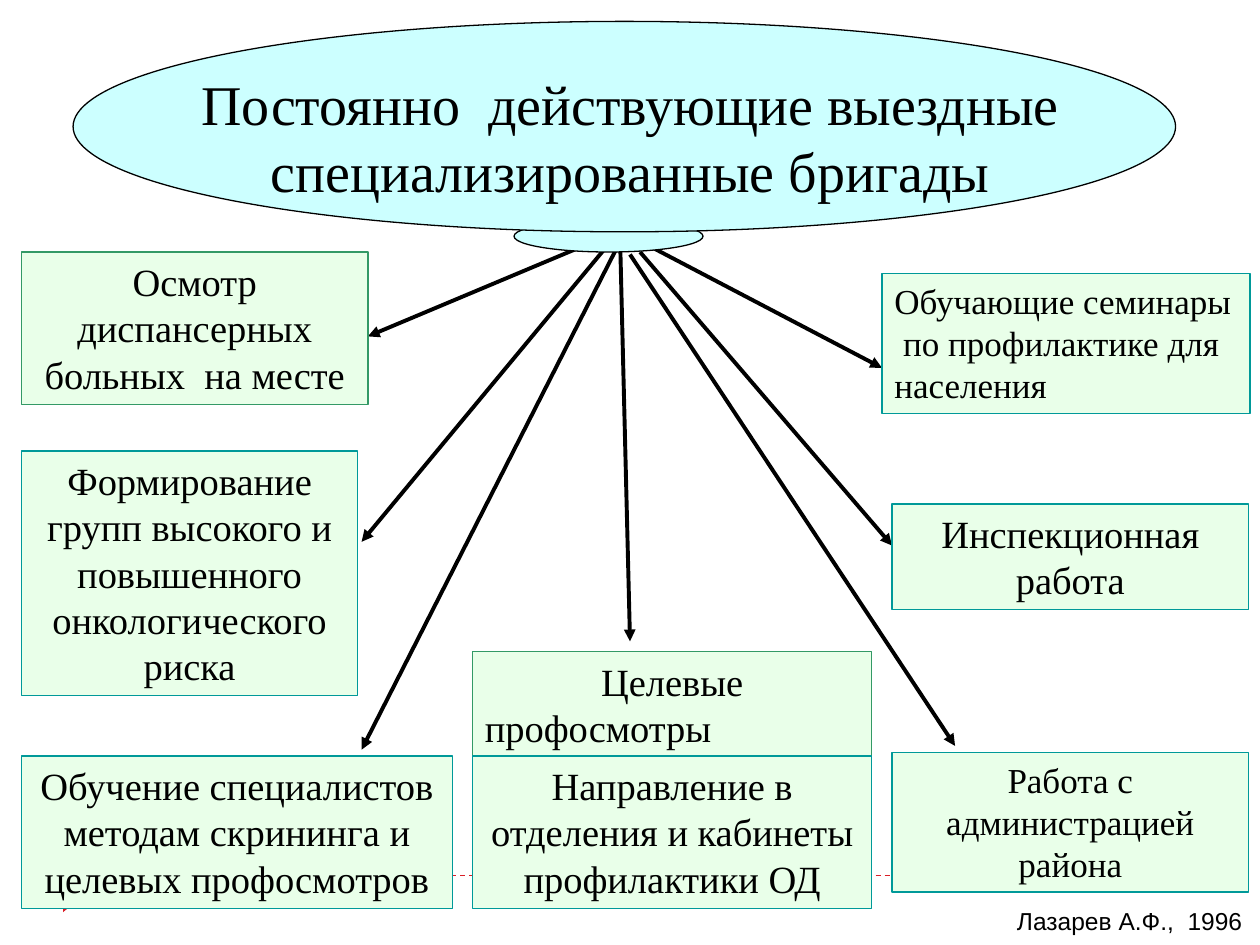
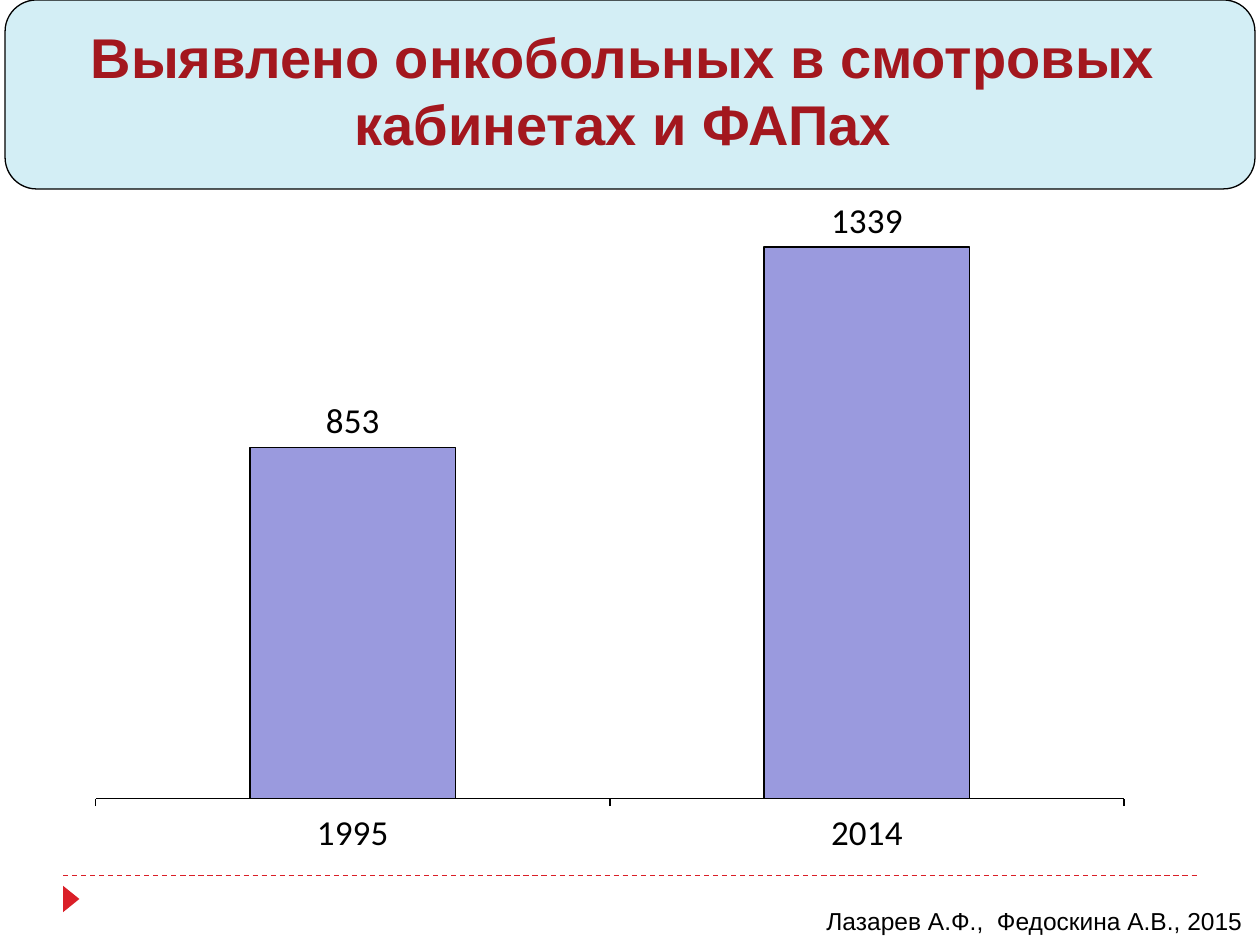
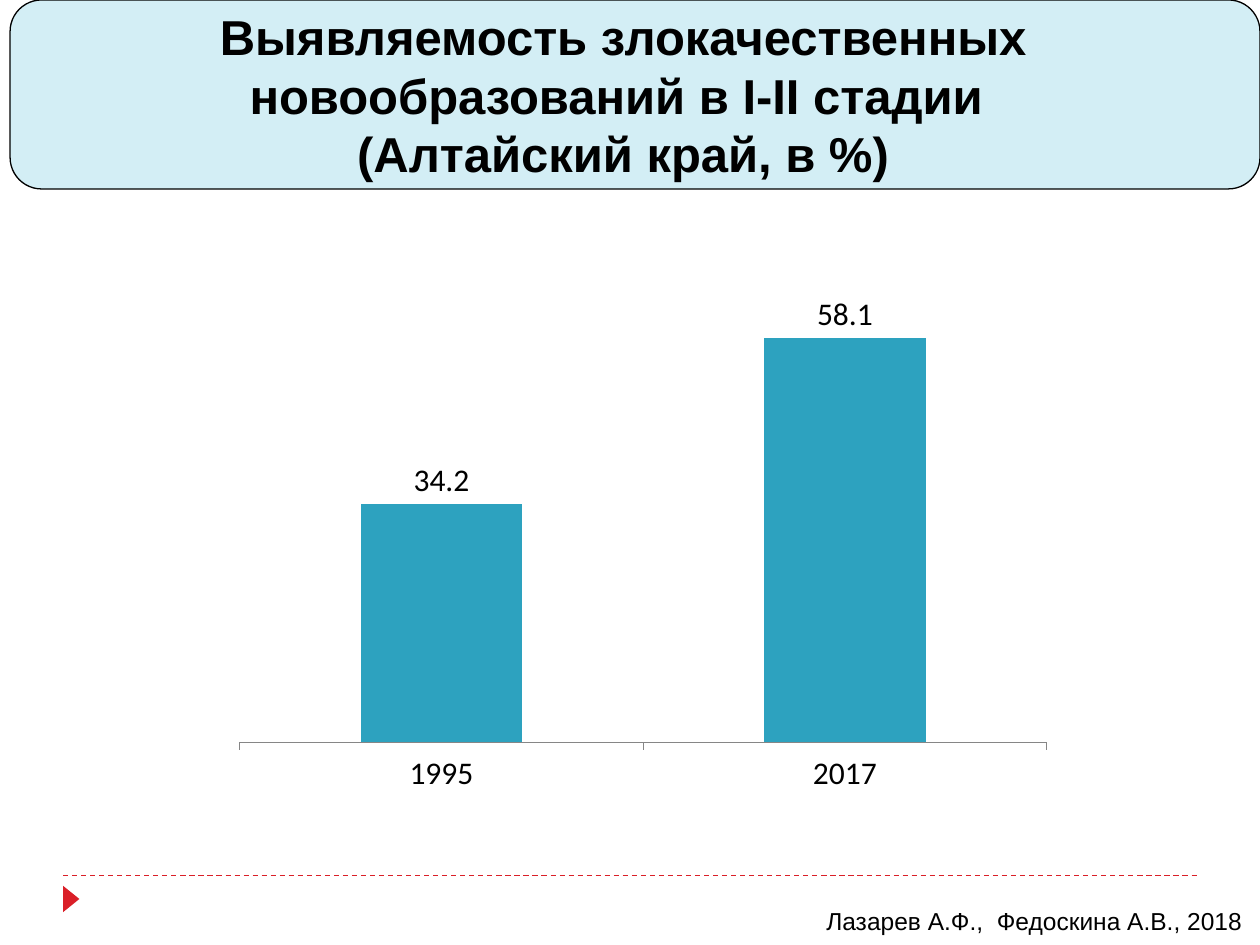
from typing import NamedTuple, Optional

from lxml import etree
from pptx import Presentation
from pptx.chart.data import CategoryChartData as ChartData
from pptx.dml.color import RGBColor
from pptx.enum.chart import XL_CHART_TYPE as Kind
from pptx.enum.chart import XL_LABEL_POSITION as Spot
from pptx.enum.chart import XL_TICK_MARK as Tick
from pptx.enum.dml import MSO_LINE as Dash
from pptx.enum.shapes import MSO_CONNECTOR as Link
from pptx.enum.shapes import MSO_SHAPE as Form
from pptx.enum.text import MSO_ANCHOR as Anchor
from pptx.enum.text import MSO_AUTO_SIZE as Fit
from pptx.enum.text import PP_ALIGN as Align
from pptx.oxml.ns import qn
from pptx.util import Inches, Pt

# Shared colours and fonts
BLACK = RGBColor(0, 0, 0)
RED = RGBColor(0xDA, 0x1F, 0x28)
WINE = RGBColor(0xA3, 0x17, 0x1E)
CYAN = RGBColor(0xCC, 0xFF, 0xFF)
MINT = RGBColor(0xE9, 0xFF, 0xE9)
GREEN = RGBColor(0x33, 0x99, 0x66)
TEAL = RGBColor(0x00, 0x99, 0x99)
PALE = RGBColor(0xD3, 0xEE, 0xF5)
LILAC = RGBColor(0x6B, 0x6B, 0xCF)
BLUE = RGBColor(0x2D, 0xA2, 0xBF)
GREY = RGBColor(0x86, 0x86, 0x86)
SANS, SERIF, CHART = "Arial", "Times New Roman", "Calibri"


class Area(NamedTuple):
    left: float
    top: float
    width: float
    height: float

    def lengths(self) -> list:
        return [Inches(side) for side in self]


class Style(NamedTuple):
    size: int
    font: str = SANS
    color: RGBColor = BLACK
    bold: bool = False


class Task(NamedTuple):
    area: Area
    text: str
    size: int = 22
    edge: RGBColor = TEAL
    aligns: tuple = (Align.CENTER,)


class Arrow(NamedTuple):
    start: tuple
    end: tuple


class Bars(NamedTuple):
    area: Area
    years: tuple
    values: tuple
    top: int
    size: int
    fill: RGBColor
    axis: RGBColor
    edge: Optional[RGBColor] = None
    alpha: int = 100


class Panel(NamedTuple):
    left: float
    area: Area
    title: str
    style: Style
    credit: str
    width: float
    bars: Bars


def write(frame, text: str, style: Style, aligns=(Align.CENTER,), wrap=True):
    frame.text = text
    frame.auto_size = Fit.NONE
    frame.word_wrap = wrap
    frame.vertical_anchor = Anchor.TOP
    frame.margin_left = frame.margin_right = Inches(0.1)
    frame.margin_top = frame.margin_bottom = Inches(0.05)
    for par, align in zip(frame.paragraphs, aligns):
        par.alignment = align
        par.space_before = Pt(0)
        for run in par.runs:
            font = run.font
            font.size, font.name, font.bold = Pt(style.size), style.font, style.bold
            font.color.rgb = style.color


def draw(slide, form, area: Area, fill: RGBColor, edge: Optional[RGBColor] = BLACK):
    shape = slide.shapes.add_shape(form, *area.lengths())
    shape.shadow.inherit = False
    shape.fill.solid()
    shape.fill.fore_color.rgb = fill
    if edge is None:
        shape.line.fill.background()
    else:
        shape.line.color.rgb = edge
        shape.line.width = Pt(0.75)
    return shape


def join(slide, start: tuple, end: tuple, color: RGBColor, width: float):
    ends = [Inches(value) for value in (*start, *end)]
    line = slide.shapes.add_connector(Link.STRAIGHT, *ends)
    line.line.color.rgb = color
    line.line.width = Pt(width)
    etree.SubElement(line.element.spPr, qn("a:effectLst"))
    return line


def point(slide, arrow: Arrow):
    line = join(slide, arrow.start, arrow.end, BLACK, 2.25)
    stroke = line.element.spPr.find(qn("a:ln"))
    etree.SubElement(stroke, qn("a:tailEnd"), type="triangle")


def start(deck):
    """Add a title-only slide with the dashed rule and red marker."""
    slide = deck.slides.add_slide(deck.slide_layouts[5])
    rule = join(slide, (0.5, 6.95), (9.5, 6.95), RED, 0.75)
    rule.line.dash_style = Dash.DASH
    mark = draw(slide, Form.ISOSCELES_TRIANGLE, Area(0.46, 7.07, 0.21, 0.13), RED, None)
    mark.rotation = 90
    return slide


def head(slide, area: Area, text: str, style: Style):
    """Place the title in front of what is drawn so far."""
    title = slide.shapes.title
    title.left, title.top, title.width, title.height = area.lengths()
    write(title.text_frame, text, style)
    slide.shapes.element.append(title.element)


def sign(slide, text: str, width: float):
    area = Area(9.96 - width, 7.14, width, 0.34)
    box = slide.shapes.add_textbox(*area.lengths())
    write(box.text_frame, text, Style(14), (Align.RIGHT,), wrap=False)


def plot(slide, bars: Bars):
    data = ChartData()
    data.categories = bars.years
    data.add_series("Series 1", bars.values)
    frame = slide.shapes.add_chart(Kind.COLUMN_CLUSTERED, *bars.area.lengths(), data)
    chart = frame.chart
    chart.has_legend = chart.has_title = False
    chart.font.name, chart.font.size = CHART, Pt(bars.size)
    chart.font.color.rgb = BLACK

    # Axes
    scale = chart.value_axis
    scale.visible = scale.has_major_gridlines = False
    scale.minimum_scale, scale.maximum_scale = 0, bars.top
    axis = chart.category_axis
    axis.major_tick_mark = Tick.OUTSIDE
    axis.format.line.color.rgb = bars.axis
    axis.format.line.width = Pt(0.75)

    # Columns and their labels
    group = chart.plots[0]
    group.gap_width, group.vary_by_categories = 150, False
    group.has_data_labels = True
    group.data_labels.show_value = True
    group.data_labels.position = Spot.OUTSIDE_END
    look = group.series[0].format
    look.fill.solid()
    look.fill.fore_color.rgb = bars.fill
    if bars.alpha < 100:
        color = next(group.series[0]._element.iter(qn("a:srgbClr")))
        etree.SubElement(color, qn("a:alpha"), val=str(bars.alpha * 1000))
    if bars.edge is not None:
        look.line.color.rgb = bars.edge
        look.line.width = Pt(0.75)


# Content of the scheme of mobile teams
ARROWS = [
    Arrow((5, 2.02), (7.58, 5.92)),
    Arrow((4.92, 1.83), (7, 2.92)),
    Arrow((4.92, 1.83), (2.92, 2.67)),
    Arrow((4.92, 1.83), (2.87, 4.3)),
    Arrow((4.92, 1.92), (2.87, 5.95)),
    Arrow((4.92, 1.83), (5, 5.09)),
    Arrow((5.08, 2), (7.08, 4.33)),
]
TASKS = [
    Task(Area(0.17, 2, 2.75, 1.21), "Осмотр диспансерных больных  на месте", edge=GREEN),
    Task(Area(3.75, 5.17, 3.17, 0.84), "Целевые\nпрофосмотры", edge=GREEN,
         aligns=(Align.CENTER, Align.LEFT)),
    Task(Area(3.75, 6, 3.17, 1.21), "Направление в отделения и кабинеты профилактики ОД"),
    Task(Area(7.08, 4, 2.83, 0.84), "Инспекционная работа"),
    Task(Area(7.08, 5.97, 2.83, 1.11), "Работа с администрацией района", 20),
    Task(Area(0.17, 3.58, 2.67, 1.94),
         "Формирование групп высокого и повышенного онкологического риска"),
    Task(Area(7, 2.17, 2.92, 1.11), "Обучающие семинары  по профилактике для населения",
         20, aligns=(Align.LEFT,)),
    Task(Area(0.17, 6, 3.42, 1.21),
         "Обучение специалистов методам скрининга и целевых профосмотров"),
]

# Content of the chart slides
PANELS = [
    Panel(0.04, Area(0.2, 0.13, 9.49, 0.86),
          "Выявлено онкобольных в смотровых кабинетах и ФАПах",
          Style(32, color=WINE, bold=True),
          "Лазарев А.Ф.,  Федоскина А.В., 2015", 3.52,
          Bars(Area(0.59, 0.99, 8.5, 5.91), ("1995", "2014"), (853, 1339),
               1600, 20, LILAC, BLACK, BLACK, 68)),
    Panel(0.08, Area(0.2, 0, 9.49, 1.22),
          "Выявляемость злокачественных новообразований в I-II стадии \v(Алтайский край, в %)",
          Style(28, bold=True),
          "Лазарев А.Ф.,  Федоскина А.В., 2018", 3.63,
          Bars(Area(1.77, 1.94, 6.67, 4.44), ("1995", "2017"), (34.2, 58.1),
               70, 18, BLUE, GREY)),
]


def show_teams(deck):
    slide = start(deck)
    for arrow in ARROWS:
        point(slide, arrow)
    for area in (Area(4.08, 1.75, 1.5, 0.25), Area(0.58, 0.17, 8.75, 1.67)):
        draw(slide, Form.OVAL, area, CYAN)
    head(slide, Area(1.17, 0.5, 7.67, 1.17),
         "Постоянно  действующие выездные специализированные бригады", Style(32, SERIF))
    for task in TASKS:
        box = draw(slide, Form.RECTANGLE, task.area, MINT, task.edge)
        write(box.text_frame, task.text, Style(task.size, SERIF), task.aligns)
    sign(slide, "Лазарев А.Ф.,  1996", 2)


def show_chart(deck, panel: Panel):
    slide = start(deck)
    plot(slide, panel.bars)
    draw(slide, Form.ROUNDED_RECTANGLE, Area(panel.left, 0, 9.92, 1.5), PALE)
    head(slide, panel.area, panel.title, panel.style)
    sign(slide, panel.credit, panel.width)


def main():
    deck = Presentation()
    deck.slide_width, deck.slide_height = Inches(10), Inches(7.5)
    show_teams(deck)
    for panel in PANELS:
        show_chart(deck, panel)
    deck.save("out.pptx")


if __name__ == "__main__":
    main()
